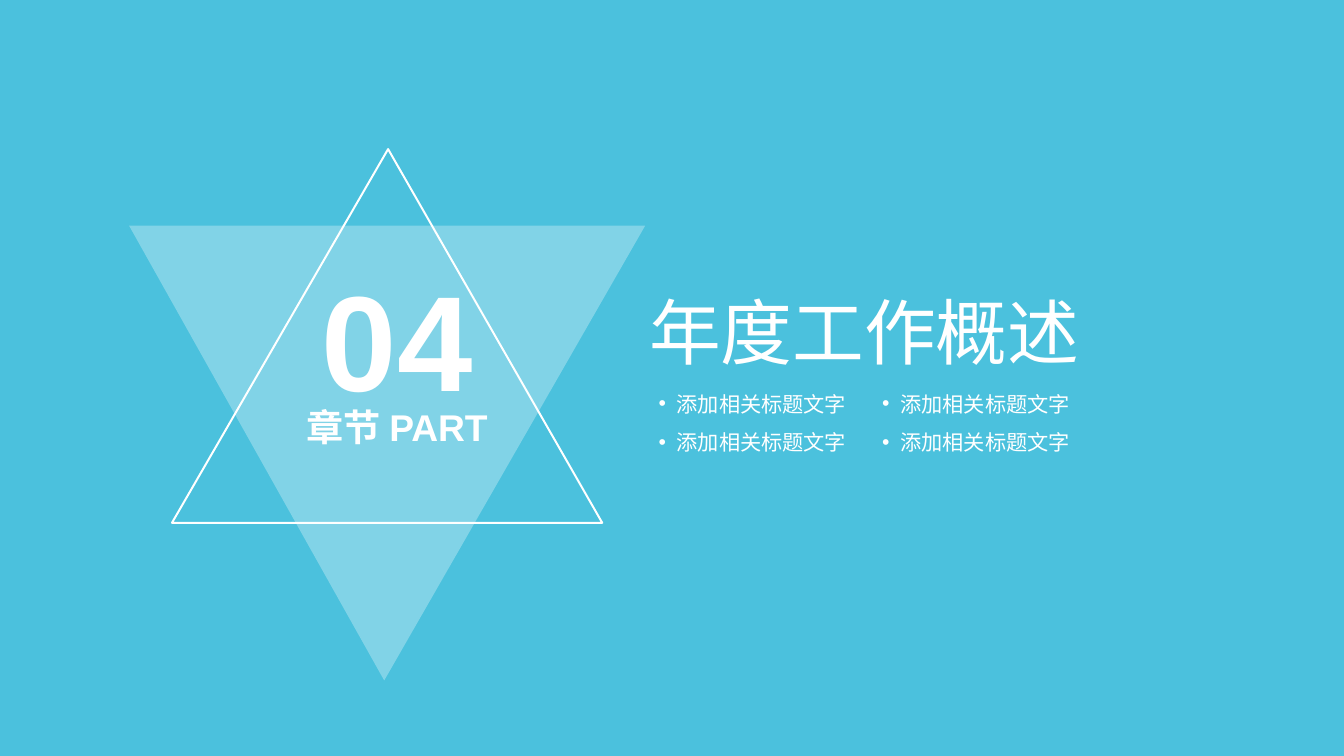
from lxml import etree
from pptx import Presentation
from pptx import util as u
from pptx.dml.color import RGBColor
from pptx.enum import text as t
from pptx.oxml.ns import qn

# Content
NUMBER = "04"
PART = "章节 PART"
TITLE = "年度工作概述"
COLUMNS = [["添加相关标题文字"] * 2, ["添加相关标题文字"] * 2]

# Look
COLORS = {"sky": "4BC1DD", "white": "FFFFFF"}
FONT = "Arial"
WIDTH, HEIGHT = u.Inches(14.06), u.Inches(7.91)

# Layout, in percent of the slide's width and height
FILLED_TRIANGLE = [(9.6, 29.84), (48.01, 29.84), (28.59, 90.01)]
OUTLINE_TRIANGLE = [(28.88, 19.72), (44.81, 69.15), (12.8, 69.15)]
NUMBER_AREA = (22.97, 33.88, 13.16, 21.74)
PART_AREA = (16.07, 53.48, 26.96, 5.94)
TEXT_LEFT = 48.29
TITLE_AREA = (TEXT_LEFT, 38.05, 34.78, 11.5)
LIST_TOP, LIST_WIDTH, LIST_HEIGHT = 51.07, 16.64, 9.86


def across(share):
    return round(WIDTH * share / 100)


def down(share):
    return round(HEIGHT * share / 100)


def color(name):
    return RGBColor.from_string(COLORS[name])


def place(box, area):
    left, top, width, height = area
    box.left, box.top = across(left), down(top)
    box.width, box.height = across(width), down(height)


def write(box, lines, size, bold=False, align=t.PP_ALIGN.LEFT,
          inset=(0, 0), gap=0, bullet=None):
    frame = box.text_frame
    frame.word_wrap = True
    frame.auto_size = t.MSO_AUTO_SIZE.NONE
    frame.vertical_anchor = t.MSO_ANCHOR.TOP
    frame.margin_left = frame.margin_right = u.Inches(inset[0])
    frame.margin_top = frame.margin_bottom = u.Inches(inset[1])
    frame.text = "\n".join(lines)
    for para in frame.paragraphs:
        para.alignment = align
        para.space_before, para.space_after = u.Pt(0), u.Pt(gap)
        if bullet:
            props = para._p.get_or_add_pPr()
            indent = u.Inches(0.19)
            props.set("marL", str(indent))
            props.set("indent", str(-indent))
            etree.SubElement(props, qn("a:buChar")).set("char", bullet)
        for span in para.runs:
            span.font.name, span.font.size = FONT, u.Pt(size)
            span.font.bold = bold
            span.font.color.rgb = color("white")


def draw_triangle(page, corners):
    points = [(across(x), down(y)) for x, y in corners]
    builder = page.shapes.build_freeform(*points[0])
    builder.add_line_segments(points[1:], close=True)
    triangle = builder.convert_to_shape()
    triangle.shadow.inherit = False
    return triangle


def main():
    deck = Presentation()
    deck.slide_width, deck.slide_height = WIDTH, HEIGHT
    page = deck.slides.add_slide(deck.slide_layouts.get_by_name("Two Content"))
    page.background.fill.solid()
    page.background.fill.fore_color.rgb = color("sky")

    # Star of two triangles
    filled = draw_triangle(page, FILLED_TRIANGLE)
    filled.fill.solid()
    filled.fill.fore_color.rgb = color("white")
    filled.line.fill.background()
    tint = filled.fill._xPr.find(qn("a:solidFill"))[0]
    etree.SubElement(tint, qn("a:alpha")).set("val", "30000")

    outline = draw_triangle(page, OUTLINE_TRIANGLE)
    outline.fill.background()
    outline.line.color.rgb = color("white")
    outline.line.width = u.Pt(1.5)

    # Chapter number and label
    for line, area, size in [(NUMBER, NUMBER_AREA, 102), (PART, PART_AREA, 28)]:
        box = page.shapes.add_textbox(0, 0, 0, 0)
        place(box, area)
        write(box, [line], size, bold=True, align=t.PP_ALIGN.CENTER)

    # Title and two bullet columns
    title, *bodies = page.placeholders
    place(title, TITLE_AREA)
    write(title, [TITLE], 54)
    for column, (body, lines) in enumerate(zip(bodies, COLUMNS)):
        left = TEXT_LEFT + column * LIST_WIDTH
        place(body, (left, LIST_TOP, LIST_WIDTH, LIST_HEIGHT))
        write(body, lines, 16, inset=(0.1, 0.05), gap=10, bullet="•")

    deck.save("out.pptx")


if __name__ == "__main__":
    main()
